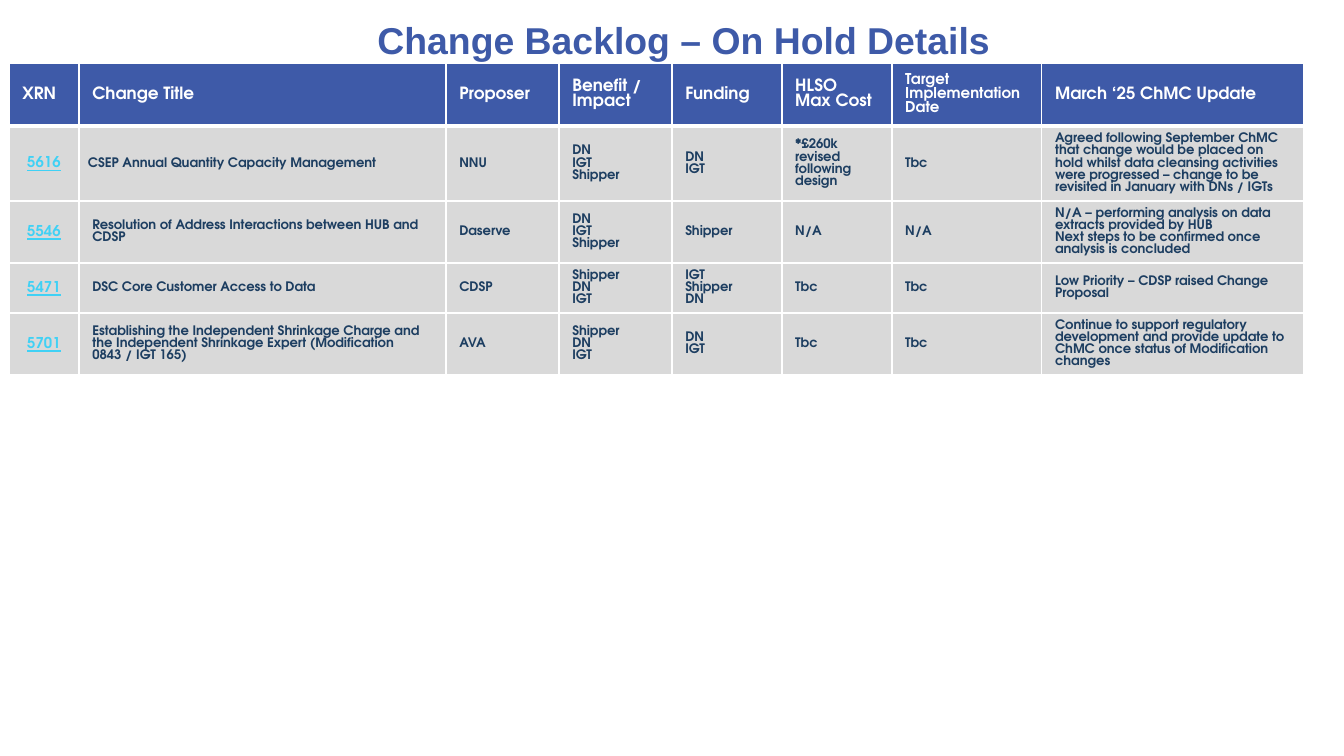
import dataclasses

import pptx
import pptx.dml.color
import pptx.enum.text
import pptx.oxml
import pptx.oxml.ns
import pptx.util

SCALE = 9144000 / 1344
ALIGN = pptx.enum.text.PP_ALIGN
MIDDLE = pptx.enum.text.MSO_ANCHOR.MIDDLE


@dataclasses.dataclass(frozen=True)
class Theme:
    blue: str = "3E5AA8"
    navy: str = "1D3E61"
    cyan: str = "40D1F5"
    grey: str = "D9D9D9"
    white: str = "FFFFFF"
    head: str = "Arial"
    body: str = "TeX Gyre Adventor"
    title: int = 20
    large: int = 9
    mid: int = 8
    small: int = 7


def px(num):
    return pptx.util.Emu(round(num * SCALE))


def rgb(hue):
    return pptx.dml.color.RGBColor.from_string(hue)


class Page:
    """Holds the theme and the slide being filled."""

    def __init__(self, deck, theme):
        self.theme = theme
        self.slide = deck.slides.add_slide(deck.slide_layouts[5])

    def label(self, frame, text, size, hue, font, align=ALIGN.LEFT, under=False):
        """Fill a frame with one bold paragraph for each line of text."""
        for i, line in enumerate(text.split("\n")):
            para = frame.add_paragraph() if i else frame.paragraphs[0]
            para.alignment = align
            run = para.add_run()
            run.text = line
            run.font.name = font
            run.font.size = pptx.util.Pt(size)
            run.font.bold = True
            run.font.underline = under
            run.font.color.rgb = rgb(hue)

    def title(self, text, left, top, width, height):
        look = self.theme
        shape = self.slide.shapes.title
        shape.left, shape.top = px(left), px(top)
        shape.width, shape.height = px(width), px(height)
        frame = shape.text_frame
        frame.word_wrap = True
        frame.vertical_anchor = MIDDLE
        self.label(frame, text, look.title, look.blue, look.head, ALIGN.CENTER)
        self.slide.shapes._spTree.append(shape._element)

    def edge(self, cell, side, width):
        """Draw one white border of a cell, its width in points."""
        space = pptx.oxml.ns.nsdecls("a")
        cell._tc.get_or_add_tcPr().append(pptx.oxml.parse_xml(
            f'<a:ln{side} {space} w="{pptx.util.Pt(width)}"><a:solidFill>'
            f'<a:srgbClr val="{self.theme.white}"/></a:solidFill></a:ln{side}>'))

    def cell(self, cell, text, row, col):
        look = self.theme
        cell.vertical_anchor = MIDDLE
        for side in "LRTB":
            thick = (side, row) in (("B", 0), ("T", 1))
            self.edge(cell, side, 3 if thick else 1)
        cell.fill.solid()
        cell.fill.fore_color.rgb = rgb(look.grey if row else look.blue)
        frame = cell.text_frame
        if row == 0:
            size = look.mid if text.startswith("Target") else look.large
            self.label(frame, text, size, look.white, look.body)
        elif col == 0:
            self.label(frame, text, look.mid, look.cyan, look.body,
                       ALIGN.CENTER, True)
        else:
            self.label(frame, text, look.small, look.navy, look.body)

    def table(self, rows, left, top, wide, tall):
        grid = self.slide.shapes.add_table(
            len(tall), len(wide), px(left), px(top),
            px(sum(wide)), px(sum(tall))).table
        for col, width in zip(grid.columns, wide):
            col.width = px(width)
        for line, height in zip(grid.rows, tall):
            line.height = px(height)
        for r, texts in enumerate(rows):
            for c, text in enumerate(texts):
                self.cell(grid.cell(r, c), text, r, c)
        return grid


ROWS = [
    ["XRN", "Change Title", "Proposer", "Benefit / Impact", "Funding",
     "HLSO\nMax Cost", "Target Implementation Date", "March ‘25 ChMC Update"],
    ["5616", "CSEP Annual Quantity Capacity Management", "NNU",
     "DN\nIGT\nShipper", "DN\nIGT", "*£260k revised following design", "Tbc",
     "Agreed following September ChMC that change would be placed on hold "
     "whilst data cleansing activities were progressed – change to be "
     "revisited in January with DNs / IGTs"],
    ["5546", "Resolution of Address Interactions between HUB and CDSP",
     "Daserve", "DN\nIGT\nShipper", "Shipper", "N/A", "N/A",
     "N/A – performing analysis on data extracts provided by HUB\n"
     "Next steps to be confirmed once analysis is concluded"],
    ["5471", "DSC Core Customer Access to Data", "CDSP", "Shipper\nDN\nIGT",
     "IGT\nShipper\nDN", "Tbc", "Tbc",
     "Low Priority – CDSP raised Change Proposal"],
    ["5701", "Establishing the Independent Shrinkage Charge and the "
     "Independent Shrinkage Expert (Modification 0843 / IGT 165)", "AVA",
     "Shipper\nDN\nIGT", "DN\nIGT", "Tbc", "Tbc",
     "Continue to support regulatory development and provide update to ChMC "
     "once status of Modification changes"],
]


def main():
    deck = pptx.Presentation()
    deck.slide_width, deck.slide_height = px(1344), px(756)
    page = Page(deck, Theme())
    grid = page.table(ROWS, 9, 63, [70, 367, 113, 113, 110, 110, 150, 262],
                      [63, 75, 62, 50, 62])
    first = grid.cell(1, 1)
    first.margin_left = first.margin_right = px(9)
    first.margin_top = first.margin_bottom = 0
    para = first.text_frame.paragraphs[0]
    para.line_spacing = 1.15
    para.space_after = pptx.util.Pt(10)
    page.title("Change Backlog – On Hold Details", 79, 8, 1210, 63)
    deck.save("out.pptx")


if __name__ == "__main__":
    main()
